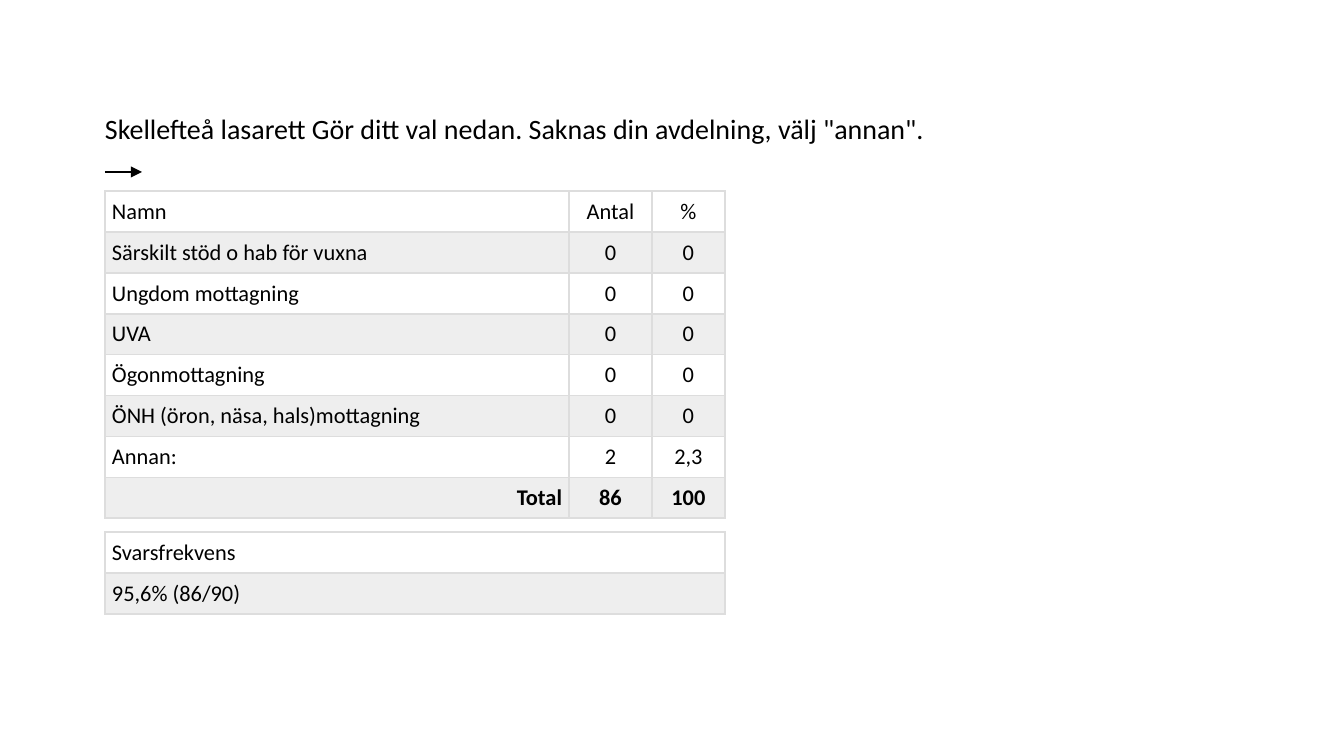
"""Build a survey result slide with an answer table and a response rate table."""
from lxml.etree import SubElement
from pptx import Presentation
from pptx.dml.color import RGBColor
from pptx.enum.shapes import MSO_CONNECTOR
from pptx.enum.text import MSO_ANCHOR, MSO_AUTO_SIZE, PP_ALIGN
from pptx.oxml.ns import qn
from pptx.util import Pt

TITLE = 'Skellefteå lasarett Gör ditt val nedan. Saknas din avdelning, välj "annan".'
ANSWERS = [
    ("Namn", "Antal", "%"),
    ("Särskilt stöd o hab för vuxna", "0", "0"),
    ("Ungdom mottagning", "0", "0"),
    ("UVA", "0", "0"),
    ("Ögonmottagning", "0", "0"),
    ("ÖNH (öron, näsa, hals)mottagning", "0", "0"),
    ("Annan:", "2", "2,3"),
    ("Total", "86", "100"),
]
RATE = [("Svarsfrekvens",), ("95,6% (86/90)",)]
COLS = [464, 83, 73]
BANDS = ["FFFFFF", "EEEEEE"]
INK, RULE = "000000", "DDDDDD"
LEFT, ROW, PAD = 105, 40, 7


def px(count):
    return round(count * 914400 / 134.4)


def tint(code):
    return RGBColor.from_string(code)


def style(para, size, align, bold=False):
    para.alignment = align
    for run in para.runs:
        font = run.font
        font.name, font.size, font.bold = "Calibri", Pt(size), bold
        font.color.rgb = tint(INK)


def frame(cell):
    props = cell._tc.get_or_add_tcPr()
    for side in ("lnL", "lnR", "lnT", "lnB"):
        line = SubElement(props, qn(f"a:{side}"), w=str(Pt(1)))
        fill = SubElement(line, qn("a:solidFill"))
        SubElement(fill, qn("a:srgbClr"), val=RULE)


def add_grid(slide, top, rows, cols):
    table = slide.shapes.add_table(
        len(rows), len(cols), px(LEFT), px(top), px(sum(cols)), px(ROW * len(rows))
    ).table
    for col, width in zip(table.columns, cols):
        col.width = px(width)
    for r, row in enumerate(rows):
        total = row[0] == "Total"
        for c, text in enumerate(row):
            cell = table.cell(r, c)
            cell.text = text
            cell.margin_left = cell.margin_right = px(PAD)
            cell.margin_top = cell.margin_bottom = px(PAD)
            first = PP_ALIGN.RIGHT if total else PP_ALIGN.LEFT
            style(cell.text_frame.paragraphs[0], 12, PP_ALIGN.CENTER if c else first, total)
            frame(cell)
            cell.fill.solid()
            cell.fill.fore_color.rgb = tint(BANDS[r % 2])


def add_title(slide):
    title = slide.shapes.title
    title.left, title.top, title.width, title.height = map(px, (LEFT, 105, 1137, 47))
    body = title.text_frame
    body.text = TITLE
    body.word_wrap = True
    body.auto_size = MSO_AUTO_SIZE.SHAPE_TO_FIT_TEXT
    body.vertical_anchor = MSO_ANCHOR.MIDDLE
    body.margin_left = body.margin_right = 0
    body.margin_top = body.margin_bottom = px(PAD)
    style(body.paragraphs[0], 15, PP_ALIGN.LEFT)


def add_arrow(slide):
    arrow = slide.shapes.add_connector(
        MSO_CONNECTOR.STRAIGHT, *map(px, (LEFT, 172, LEFT + 37, 172))
    )
    arrow.line.color.rgb = tint(INK)
    arrow.line.width = Pt(0.75)
    SubElement(arrow.line._get_or_add_ln(), qn("a:tailEnd"), type="triangle")
    SubElement(arrow._element.spPr, qn("a:effectLst"))


def main():
    deck = Presentation()
    deck.slide_width, deck.slide_height = px(1344), px(756)
    slide = deck.slides.add_slide(deck.slide_layouts[5])
    add_title(slide)
    add_arrow(slide)
    add_grid(slide, 191, ANSWERS, COLS)
    add_grid(slide, 532, RATE, [sum(COLS)])
    deck.save("out.pptx")


if __name__ == "__main__":
    main()
